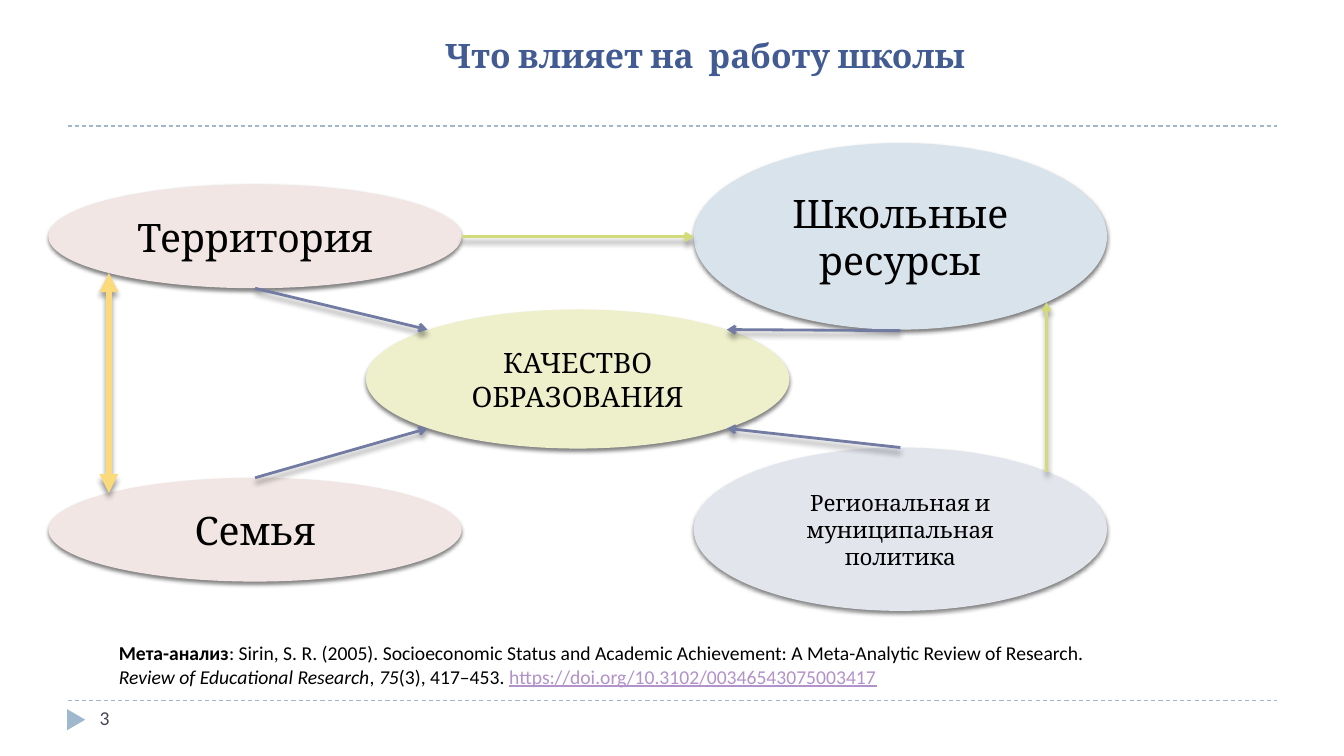
from dataclasses import dataclass

from lxml.etree import SubElement
from pptx import Presentation
from pptx.dml.color import RGBColor
from pptx.enum.dml import MSO_LINE_DASH_STYLE as Dash
from pptx.enum.shapes import MSO_CONNECTOR as Connector, MSO_SHAPE as Preset
from pptx.enum.text import MSO_ANCHOR as Anchor, PP_ALIGN as Align
from pptx.oxml.ns import qn
from pptx.util import Inches, Pt


@dataclass(frozen=True)
class Theme:
    heading_font: str = "Cambria"
    body_font: str = "Calibri"
    title: str = "425B93"
    text: str = "000000"
    number: str = "464653"
    link: str = "B292CA"
    rule: str = "9FB8CD"
    quality: str = "EDF0CA"
    local: str = "F1E6E3"
    resources: str = "D9E3EB"
    policy: str = "E3E5ED"
    influence: str = "727CA3"
    mutual: str = "FADA7A"
    support: str = "D2DA7A"
    title_size: int = 24
    large_size: int = 28
    center_size: int = 20
    small_size: int = 16
    note_size: int = 14


class SlideBuilder:
    def __init__(self, slide, theme):
        self.slide = slide
        self.theme = theme

    def add_runs(self, paragraph, runs, font, size, color):
        """Add runs given as (text, format values that differ from the base)."""
        for text, changes in runs:
            run = paragraph.add_run()
            run.text = text
            values = {"name": font, "size": Pt(size), "color": color, **changes}
            run.font.color.rgb = RGBColor.from_string(values.pop("color"))
            for name, value in values.items():
                setattr(run.font, name, value)

    def shadow(self, effects, opacity, blur, distance):
        outer = SubElement(effects, qn("a:outerShdw"), blurRad=str(Pt(blur)),
                           dist=str(Pt(distance)), dir="5400000", rotWithShape="0")
        color = SubElement(outer, qn("a:srgbClr"), val=self.theme.text)
        SubElement(color, qn("a:alpha"), val=str(opacity * 1000))

    def shape(self, preset, box, fill):
        shape = self.slide.shapes.add_shape(preset, *map(Inches, box))
        shape.shadow.inherit = False
        shape.fill.solid()
        shape.fill.fore_color.rgb = RGBColor.from_string(fill)
        shape.line.fill.background()
        return shape

    def oval(self, box, fill, text, size):
        shape = self.shape(Preset.OVAL, box, fill)
        self.shadow(shape._element.spPr.find(qn("a:effectLst")), 50, 3, 2)
        frame = shape.text_frame
        margin = Inches(0.06)
        layout = {"word_wrap": True, "vertical_anchor": Anchor.MIDDLE,
                  "margin_left": margin, "margin_right": margin,
                  "margin_top": margin, "margin_bottom": margin}
        for name, value in layout.items():
            setattr(frame, name, value)
        paragraph = frame.paragraphs[0]
        paragraph.alignment = Align.CENTER
        self.add_runs(paragraph, [(text, {})], self.theme.heading_font, size, self.theme.text)

    def line(self, start, end, color, width):
        line = self.slide.shapes.add_connector(
            Connector.STRAIGHT, *map(Inches, (*start, *end)))
        line.line.color.rgb = RGBColor.from_string(color)
        line.line.width = Pt(width)
        effects = SubElement(line._element.spPr, qn("a:effectLst"))
        return line, effects

    def rule(self, y):
        line, _ = self.line((0.67, y), (12.67, y), self.theme.rule, 0.75)
        line.line.dash_style = Dash.DASH

    def arrow(self, start, end, color, width=2, heads=(("tailEnd", "arrow"),)):
        line, effects = self.line(start, end, color, width)
        outline = line._element.spPr.find(qn("a:ln"))
        for side, kind in heads:
            SubElement(outline, qn(f"a:{side}"), type=kind)
        self.shadow(effects, 40, 4, 3.4)

    def text(self, box, runs, font, size, color):
        frame = self.slide.shapes.add_textbox(*map(Inches, box)).text_frame
        frame.word_wrap = True
        self.add_runs(frame.paragraphs[0], runs, font, size, color)


def main():
    presentation = Presentation()
    presentation.slide_width = Inches(13.33)
    presentation.slide_height = Inches(7.5)
    slide = presentation.slides.add_slide(presentation.slide_layouts[6])
    theme = Theme()
    builder = SlideBuilder(slide, theme)

    # Rules and footer marker
    for y in (6.95, 1.25):
        builder.rule(y)
    marker = builder.shape(Preset.ISOSCELES_TRIANGLE, (0.65, 7.05, 0.21, 0.18), theme.rule)
    marker.rotation = 90

    # Title
    builder.text((4.24, 0.3, 7.61, 0.5), [(" Что влияет на  работу школы", {"bold": True})],
                 theme.heading_font, theme.title_size, theme.title)

    # Factors around the quality of education
    left, right, width = 0.48, 6.88, 4.1
    ovals = [
        ((3.63, 3.07, 4.2, 1.38), theme.quality, "КАЧЕСТВО ОБРАЗОВАНИЯ", theme.center_size),
        ((left, 1.83, width, 1.03), theme.local, "Территория", theme.large_size),
        ((left, 4.74, width, 1.03), theme.local, "Семья", theme.large_size),
        ((right, 1.42, width, 1.85), theme.resources, "Школьные ресурсы", theme.large_size),
        ((right, 4.44, width, 1.62), theme.policy,
         "Региональная и муниципальная политика", theme.small_size),
    ]
    for oval in ovals:
        builder.oval(*oval)

    # Influences on quality
    left_middle, right_middle = left + width / 2, right + width / 2
    influences = [
        ((left_middle, 2.86), (4.24, 3.27)),
        ((right_middle, 3.28), (7.21, 3.27)),
        ((right_middle, 4.44), (7.21, 4.25)),
        ((left_middle, 4.74), (4.24, 4.25)),
    ]
    for start, end in influences:
        builder.arrow(start, end, theme.influence)

    # Links between factors
    builder.arrow((1.08, 4.89), (1.08, 2.71), theme.mutual, 4.5,
                  (("headEnd", "triangle"), ("tailEnd", "triangle")))
    builder.arrow((left + width, 2.35), (right, 2.35), theme.support)
    builder.arrow((10.38, 4.68), (10.38, 3), theme.support)

    # Reference and slide number
    reference = [
        ("Мета-анализ", {"bold": True}),
        (": Sirin, S. R. (2005). Socioeconomic Status and Academic Achievement: "
         "A Meta-Analytic Review of Research. ", {}),
        ("Review of Educational Research", {"italic": True}),
        (", ", {}),
        ("75", {"italic": True}),
        ("(3), 417–453. ", {}),
        ("https://doi.org/10.3102/00346543075003417",
         {"color": theme.link, "underline": True}),
    ]
    builder.text((1.08, 6.31, 9.9, 0.57), reference,
                 theme.body_font, theme.note_size, theme.text)
    builder.text((0.89, 6.95, 2.89, 0.4), [("3", {})],
                 theme.body_font, theme.note_size, theme.number)

    presentation.save("out.pptx")


if __name__ == "__main__":
    main()
